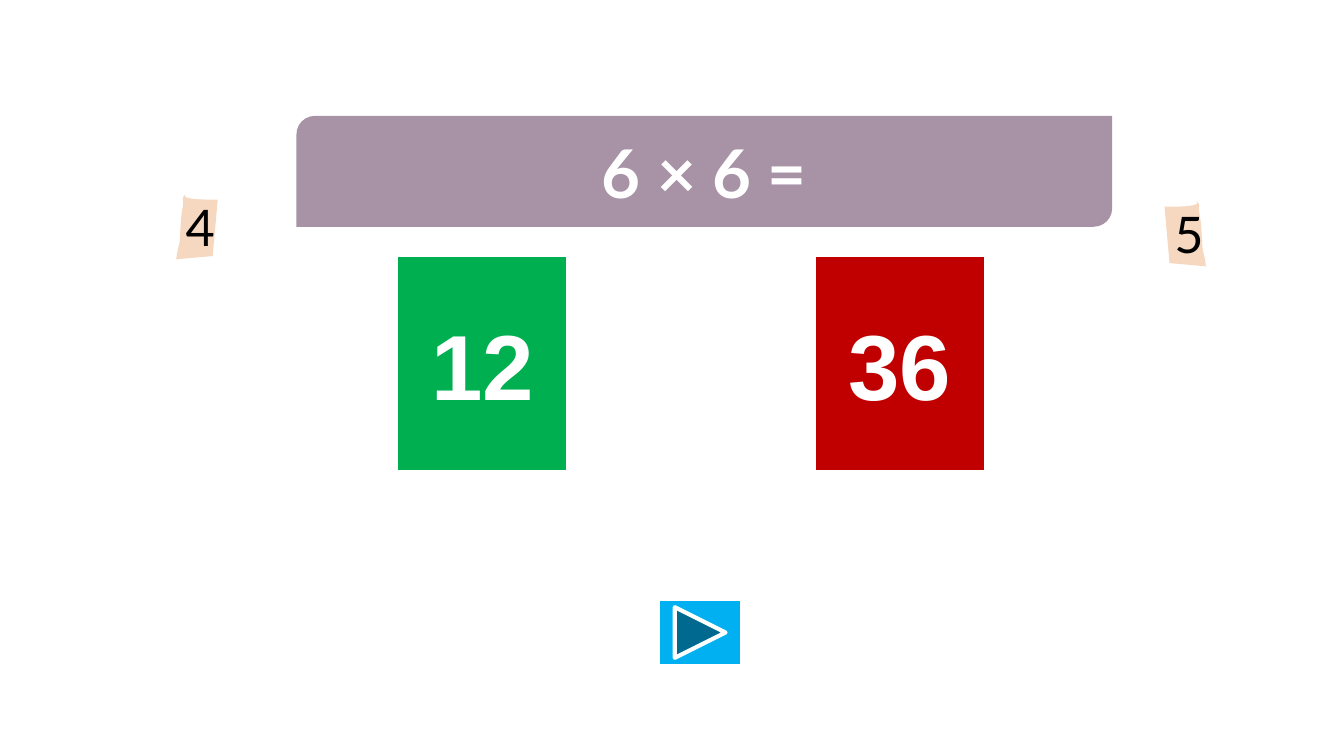
from dataclasses import dataclass
from lxml import etree
from pptx import Presentation
from pptx import util as u
from pptx.dml.color import RGBColor
from pptx.enum import shapes, text
from pptx.oxml.ns import qn

PX = 9144
KIND = shapes.MSO_SHAPE


@dataclass(frozen=True)
class Theme:
    font: str = "Lato"
    digit: str = "Arial"
    white: str = "FFFFFF"
    black: str = "000000"
    mauve: str = "A792A6"
    peach: str = "F6D8C0"
    green: str = "00B050"
    red: str = "C00000"
    blue: str = "00B0F0"
    tag: int = 36
    title: int = 48
    card: int = 66


T = Theme()

TAG = [
    [(185, 192), (175, 199), (211, 198), (216, 198)],
    [(216, 198), (211, 254)],
    [(211, 254), (178, 257)],
    [(178, 257), (172, 257), (175, 259), (175, 257)],
    [(175, 257), (175, 254), (176, 249), (178, 241)],
    [(178, 241), (179, 234), (179, 216), (181, 207)],
    [(181, 207), (183, 196), (179, 197), (185, 192)],
]


def paint(shape, fill, edge=0):
    shape.shadow.inherit = False
    shape.fill.solid()
    shape.fill.fore_color.rgb = RGBColor.from_string(fill)
    if edge:
        shape.line.color.rgb = RGBColor.from_string(T.white)
        shape.line.width = u.Pt(edge)
    else:
        shape.line.fill.background()


def label(shape, words, size, color, bold=False):
    frame = shape.text_frame
    frame.text = words
    frame.vertical_anchor = text.MSO_ANCHOR.MIDDLE
    para = frame.paragraphs[0]
    para.alignment = text.PP_ALIGN.CENTER
    font = para.runs[0].font
    font.name, font.size, font.bold = T.font, u.Pt(size), bold
    font.color.rgb = RGBColor.from_string(color)
    return para


def block(slide, kind, box, fill, edge=0):
    shape = slide.shapes.add_shape(kind, *(n * PX for n in box))
    paint(shape, fill, edge)
    return shape


def card(slide, left, words, fill):
    shape = block(slide, KIND.RECTANGLE, (left, 251, 175, 220), fill, 6)
    para = label(shape, words, T.card, T.white, True)
    para._p.get_or_add_pPr().set("rtl", "1")
    props = para.runs[0]._r.get_or_add_rPr()
    etree.SubElement(props, qn("a:cs")).set("typeface", T.digit)


def curve(ctrl, steps=12):
    for i in range(1, steps + 1):
        pts, t = ctrl, i / steps
        while len(pts) > 1:
            pts = [(a + (c - a) * t, b + (d - b) * t)
                   for (a, b), (c, d) in zip(pts, pts[1:])]
        yield pts[0]


def tag(slide, words, place):
    pts = [TAG[0][0]]
    for part in TAG:
        pts += curve(part) if len(part) > 2 else part[1:]
    pts = [tuple(n * PX for n in place(x, y)) for x, y in pts]
    form = slide.shapes.build_freeform(*pts[0])
    form.add_line_segments(pts[1:], close=True)
    shape = form.convert_to_shape()
    paint(shape, T.peach)
    label(shape, words, T.tag, T.black)


def main():
    deck = Presentation()
    deck.slide_width, deck.slide_height = 1333 * PX, 750 * PX
    slide = deck.slides.add_slide(deck.slide_layouts[6])
    block(slide, KIND.ACTION_BUTTON_FORWARD_OR_NEXT,
          (653, 594, 83, 67), T.blue, 3)
    tag(slide, "4", lambda x, y: (x, y))
    tag(slide, "5", lambda x, y: (1371 - x, y + 7))
    title = block(slide, KIND.ROUND_2_DIAG_RECTANGLE,
                  (294, 115, 809, 110), T.mauve)
    label(title, "6 × 6 =", T.title, T.white, True)
    card(slide, 391, "12", T.green)
    card(slide, 805, "36", T.red)
    deck.save("out.pptx")


if __name__ == "__main__":
    main()
